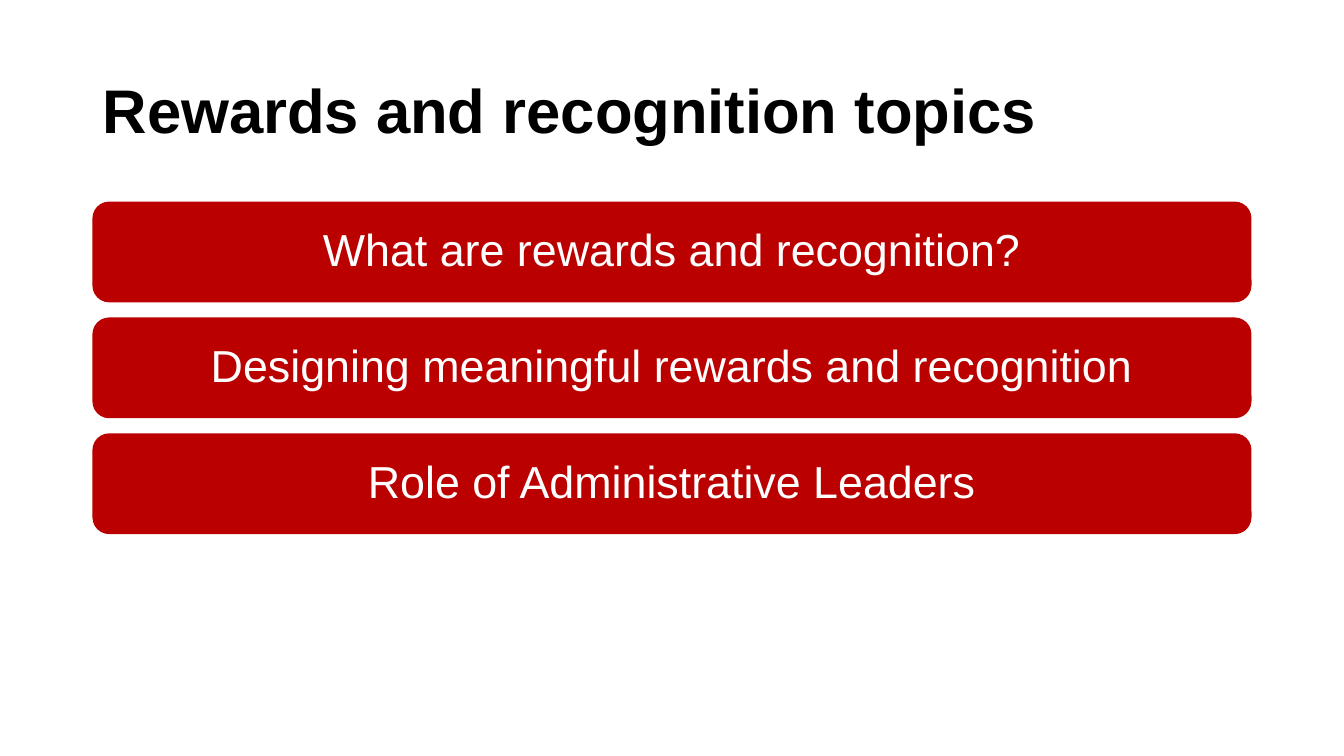
from dataclasses import dataclass

from pptx import Presentation
from pptx.dml.color import RGBColor
from pptx.enum import shapes, text
from pptx.slide import Slide
from pptx.text.text import TextFrame
from pptx.util import Cm, Pt


@dataclass(frozen=True)
class Theme:
    font: str = "Arial"
    title_color: RGBColor = RGBColor(0x00, 0x00, 0x00)
    bar_fill: RGBColor = RGBColor(0xBB, 0x00, 0x00)
    bar_text: RGBColor = RGBColor(0xFF, 0xFF, 0xFF)
    title_size: int = 44
    bar_size: int = 32


@dataclass(frozen=True)
class TopicBar:
    label: str
    top: float


THEME = Theme()
LEFT, WIDTH = 2.33, 29.21
BAR_TOP, BAR_HEIGHT, BAR_PITCH = 5.08, 2.54, 2.92
TOPICS = (
    "What are rewards and recognition?",
    "Designing meaningful rewards and recognition",
    "Role of Administrative Leaders",
)


def write_text(tf: TextFrame, content: str, size: int, color: RGBColor,
               align: text.PP_ALIGN, bold: bool = False) -> None:
    tf.text = content
    tf.word_wrap = True
    tf.auto_size = text.MSO_AUTO_SIZE.NONE
    tf.vertical_anchor = text.MSO_ANCHOR.MIDDLE
    p = tf.paragraphs[0]
    p.alignment = align
    p.line_spacing = 0.9
    font = p.runs[0].font
    font.name = THEME.font
    font.size = Pt(size)
    font.bold = bold
    font.color.rgb = color


def add_title(s: Slide, content: str) -> None:
    title = s.shapes.title
    title.left, title.top = Cm(LEFT), Cm(1.02)
    title.width, title.height = Cm(WIDTH), Cm(3.68)
    write_text(title.text_frame, content, THEME.title_size,
               THEME.title_color, text.PP_ALIGN.LEFT, bold=True)


def add_bar(s: Slide, bar: TopicBar) -> None:
    sp = s.shapes.add_shape(shapes.MSO_SHAPE.ROUNDED_RECTANGLE, Cm(LEFT),
                            Cm(bar.top), Cm(WIDTH), Cm(BAR_HEIGHT))
    sp.shadow.inherit = False
    sp.fill.solid()
    sp.fill.fore_color.rgb = THEME.bar_fill
    sp.line.fill.background()
    write_text(sp.text_frame, bar.label, THEME.bar_size,
               THEME.bar_text, text.PP_ALIGN.CENTER)


def main() -> None:
    prs = Presentation()
    prs.slide_width, prs.slide_height = Cm(33.87), Cm(19.05)
    s = prs.slides.add_slide(prs.slide_layouts.get_by_name("Title Only"))

    # Title
    add_title(s, "Rewards and recognition topics")

    # Topic bars, evenly stacked
    for i, label in enumerate(TOPICS):
        add_bar(s, TopicBar(label, BAR_TOP + i * BAR_PITCH))

    prs.save("out.pptx")


if __name__ == "__main__":
    main()
